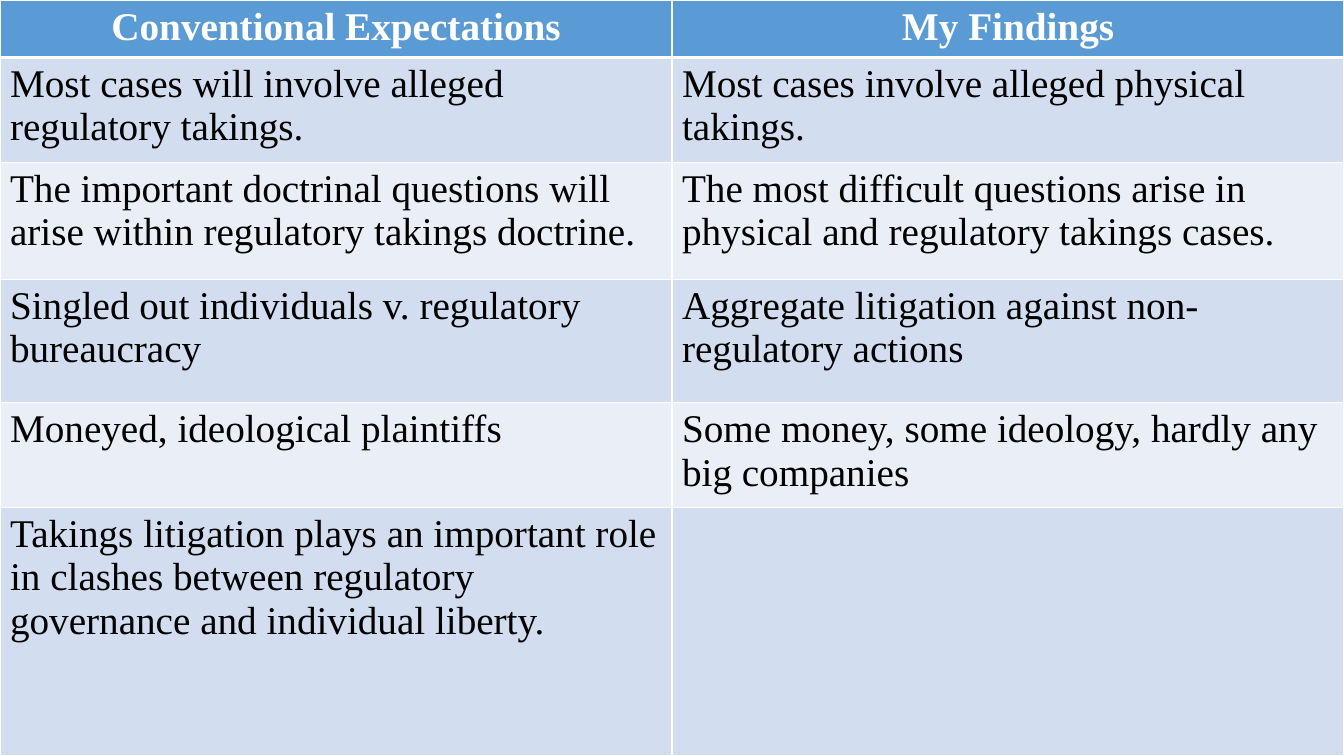
import lxml.etree
import pptx
import pptx.dml.color
import pptx.enum.text
import pptx.oxml.ns
import pptx.util

COMPARISON = [
    ("Conventional Expectations", "My Findings"),
    ("Most cases will involve alleged regulatory takings.",
     "Most cases involve alleged physical takings."),
    ("The important doctrinal questions will arise within regulatory takings doctrine.",
     "The most difficult questions arise in physical and regulatory takings cases."),
    ("Singled out individuals v. regulatory bureaucracy",
     "Aggregate litigation against non-regulatory actions"),
    ("Moneyed, ideological plaintiffs",
     "Some money, some ideology, hardly any big companies"),
    ("Takings litigation plays an important role in clashes between regulatory "
     "governance and individual liberty.", ""),
]
ROW_WEIGHTS = [0.57, 1.04, 1.16, 1.22, 1.04, 2.46]


def color(hex_text):
    return pptx.dml.color.RGBColor.from_string(hex_text)


def write(frame, text, font="Times New Roman", size=28, fill="000000", bold=False, align="LEFT"):
    para = frame.paragraphs[0]
    para.alignment = getattr(pptx.enum.text.PP_ALIGN, align)
    span = para.add_run()
    span.text = text
    span.font.name = font
    span.font.size = pptx.util.Pt(size)
    span.font.bold = bold
    span.font.color.rgb = color(fill)


class ComparisonSlide:
    background = "222A35"
    header = "5B9BD5"
    bands = ("D2DEEF", "EAEFF7")
    rule = "FFFFFF"

    def __init__(self, deck):
        self.width, self.height = deck.slide_width, deck.slide_height
        self.page = deck.slides.add_slide(deck.slide_layouts[6])
        self.page.background.fill.solid()
        self.page.background.fill.fore_color.rgb = color(self.background)

    def border(self, cell, side, points):
        properties = cell._tc.get_or_add_tcPr()
        name = pptx.oxml.ns.qn
        line = lxml.etree.SubElement(properties, name(f"a:ln{side}"), w=str(pptx.util.Pt(points)))
        solid = lxml.etree.SubElement(line, name("a:solidFill"))
        lxml.etree.SubElement(solid, name("a:srgbClr"), val=self.rule)

    def cell(self, cell, text, row):
        heading = row == 0
        thickness = {"L": 1, "R": 1, "T": 3 if row == 1 else 1, "B": 3 if heading else 1}
        for side, points in thickness.items():
            self.border(cell, side, points)
        cell.fill.solid()
        cell.fill.fore_color.rgb = color(self.header if heading else self.bands[(row - 1) % 2])
        if heading:
            write(cell.text_frame, text, fill="FFFFFF", bold=True, align="CENTER")
        elif text:
            write(cell.text_frame, text)

    def table(self, content, weights):
        columns = len(content[0])
        table = self.page.shapes.add_table(
            len(content), columns, 0, 0, self.width, self.height).table
        for column in table.columns:
            column.width = self.width // columns
        for row, (texts, weight) in enumerate(zip(content, weights)):
            table.rows[row].height = int(self.height * weight / sum(weights))
            for column, text in enumerate(texts):
                self.cell(table.cell(row, column), text, row)


def main():
    deck = pptx.Presentation()
    deck.slide_width = pptx.util.Inches(13.33)
    deck.slide_height = pptx.util.Inches(7.5)
    ComparisonSlide(deck).table(COMPARISON, ROW_WEIGHTS)
    deck.save("out.pptx")


if __name__ == "__main__":
    main()
